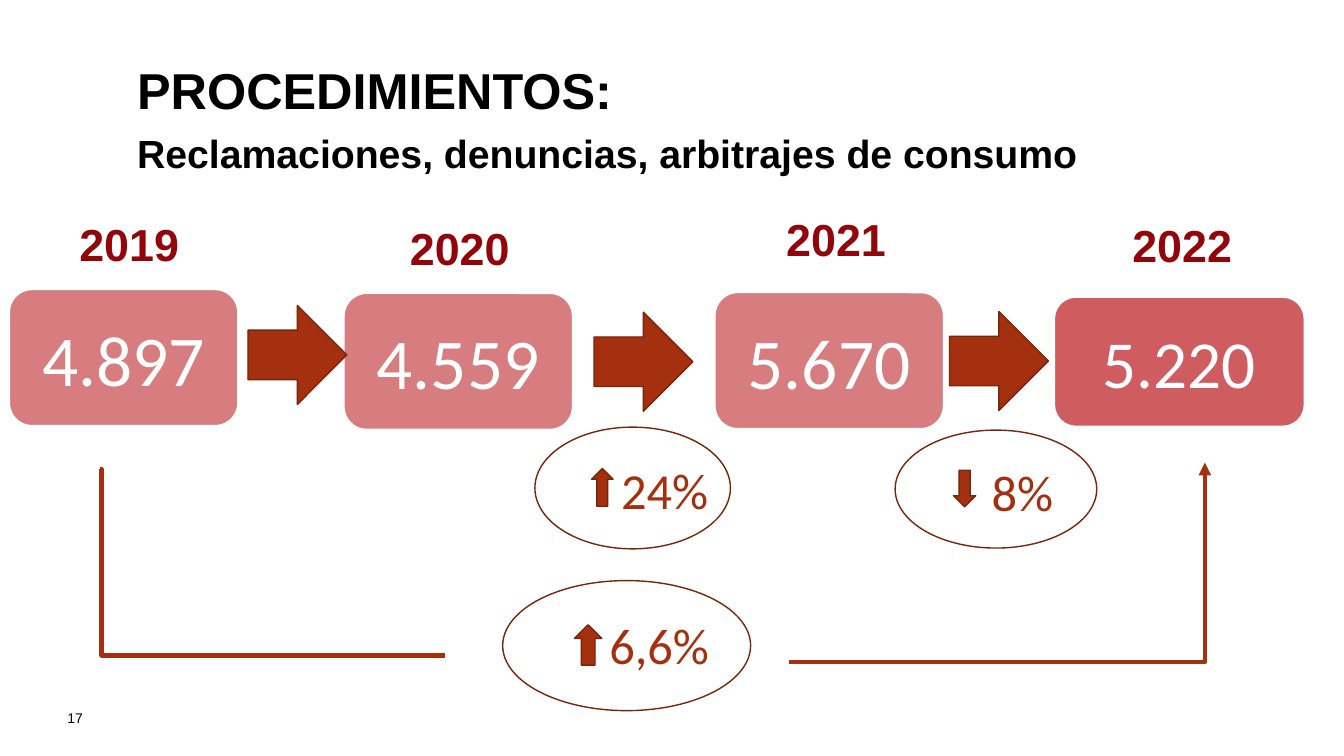
from dataclasses import dataclass

from lxml.etree import SubElement
from pptx import Presentation
from pptx.dml.color import RGBColor
from pptx.enum.shapes import MSO_CONNECTOR, MSO_SHAPE
from pptx.enum.text import MSO_ANCHOR, PP_ALIGN
from pptx.oxml.ns import qn
from pptx.util import Inches, Pt


@dataclass(frozen=True)
class Theme:
    heading_font: str = "Arial"
    figure_font: str = "Calibri"
    black: str = "000000"
    white: str = "FFFFFF"
    year: str = "92060B"
    card: str = "CF5D60"
    rust: str = "A5300F"
    outline: str = "7A240B"
    title_size: float = 36
    subtitle_size: float = 28
    year_size: float = 32
    change_size: float = 36
    number_size: float = 10


@dataclass(frozen=True)
class Box:
    """An area of the slide, in hundredths of its width and height."""
    left: float
    top: float
    width: float
    height: float

    def inner(self, left, top, width, height):
        """A box inside this one, given as shares of its size."""
        return Box(self.left + left * self.width, self.top + top * self.height,
                   width * self.width, height * self.height)


THEME = Theme()
WIDTH, HEIGHT = Inches(13.33), Inches(7.5)
COLUMN, ROW = WIDTH / 100, HEIGHT / 100


def emu(box):
    return (round(box.left * COLUMN), round(box.top * ROW),
            round(box.width * COLUMN), round(box.height * ROW))


def style(paragraph, font, size, color, bold=False):
    paragraph.font.name = font
    paragraph.font.size = Pt(size)
    paragraph.font.bold = bold
    paragraph.font.color.rgb = RGBColor.from_string(color)


def add_text(page, box, text, font, size, color, bold=False, margins=(0, 0.04)):
    """Place a text box with its first paragraph and return its frame."""
    frame = page.shapes.add_textbox(*emu(box)).text_frame
    frame.word_wrap = True
    frame.margin_left = frame.margin_right = Inches(margins[0])
    frame.margin_top = frame.margin_bottom = Inches(margins[1])
    frame.paragraphs[0].text = text
    style(frame.paragraphs[0], font, size, color, bold)
    return frame


def add_block(page, kind, box, fill, line):
    shape = page.shapes.add_shape(kind, *emu(box))
    shape.shadow.inherit = False
    if fill:
        shape.fill.solid()
        shape.fill.fore_color.rgb = RGBColor.from_string(fill)
    else:
        shape.fill.background()
    shape.line.color.rgb = RGBColor.from_string(line)
    shape.line.width = Pt(1)
    return shape


def add_heading(page, box, title, subtitle):
    frame = add_text(page, box, title, THEME.heading_font, THEME.title_size,
                     THEME.black, True, (0.14, 0.05))
    second = frame.add_paragraph()
    second.text = subtitle
    second.space_before = Pt(7)
    style(second, THEME.heading_font, THEME.subtitle_size, THEME.black, True)


def add_page_number(page, box, number):
    frame = add_text(page, box, number, THEME.heading_font, THEME.number_size,
                     THEME.black, margins=(0.1, 0.05))
    frame.vertical_anchor = MSO_ANCHOR.MIDDLE
    frame.paragraphs[0].alignment = PP_ALIGN.RIGHT


def add_year_card(page, box, year, year_shift, total, total_size, opacity):
    """A rounded total with its year, shifted from the card's top left corner."""
    across, up = year_shift
    label = Box(box.left + across, box.top - up, 10.65, 5.2)
    add_text(page, label, year, THEME.heading_font, THEME.year_size, THEME.year, True)
    card = add_block(page, MSO_SHAPE.ROUNDED_RECTANGLE, box, THEME.card, THEME.white)
    if opacity < 100:
        color = card._element.spPr.find(qn("a:solidFill")).find(qn("a:srgbClr"))
        SubElement(color, qn("a:alpha"), val=str(opacity * 1000))
    frame = card.text_frame
    frame.vertical_anchor = MSO_ANCHOR.MIDDLE
    paragraph = frame.paragraphs[0]
    paragraph.text = total
    paragraph.alignment = PP_ALIGN.CENTER
    style(paragraph, THEME.figure_font, total_size, THEME.white)


def add_change(page, box, arrow, change, text_start):
    """An oval with a small arrow and a percentage."""
    add_block(page, arrow, box.inner(0.29, 0.34, 0.11, 0.31), THEME.rust, THEME.outline)
    add_text(page, box.inner(text_start, 0.22, 0.75, 0.55), change, THEME.figure_font,
             THEME.change_size, THEME.rust, margins=(0.1, 0.05))
    add_block(page, MSO_SHAPE.OVAL, box, None, THEME.outline)


def add_bracket(page, start, end, bend, arrowhead=False):
    """An elbow line; bend is the share of its width where it turns."""
    line = page.shapes.add_connector(
        MSO_CONNECTOR.ELBOW, round(start[0] * COLUMN), round(start[1] * ROW),
        round(end[0] * COLUMN), round(end[1] * ROW))
    line.line.color.rgb = RGBColor.from_string(THEME.rust)
    line.line.width = Pt(3)
    properties = line._element.spPr
    guides = properties.find(qn("a:prstGeom")).get_or_add_avLst()
    SubElement(guides, qn("a:gd"), name="adj1", fmla=f"val {round(bend * 100000)}")
    if arrowhead:
        SubElement(properties.find(qn("a:ln")), qn("a:tailEnd"), type="triangle")
    SubElement(properties, qn("a:effectLst"))


def add_procedures(page):
    add_heading(page, Box(9.15, 7.1, 79.7, 18), "PROCEDIMIENTOS:",
                "Reclamaciones, denuncias, arbitrajes de consumo")
    for box, *content in (
        (Box(0.7, 38.3, 17, 18), "2019", (5.2, 10.2), "4.897", 51, 80),
        (Box(25.6, 38.8, 17, 18), "2020", (4.9, 10.2), "4.559", 51, 80),
        (Box(53.2, 38.7, 17, 18), "2021", (5.3, 11.2), "5.670", 51, 80),
        (Box(78.45, 39.3, 18.6, 17.1), "2022", (5.8, 11), "5.220", 48, 100),
    ):
        add_year_card(page, box, *content)
    for left, top in ((18.45, 40.4), (44.2, 41.3), (70.65, 41.2)):
        add_block(page, MSO_SHAPE.RIGHT_ARROW, Box(left, top, 7.35, 13.1),
                  THEME.rust, THEME.outline)
    for box, *content in (
        (Box(39.8, 56.5, 14.55, 16.1), MSO_SHAPE.UP_ARROW, "24%", 0.39),
        (Box(66.6, 56.9, 15, 15.6), MSO_SHAPE.DOWN_ARROW, "8%", 0.43),
        (Box(37.4, 76.8, 18.45, 17.2), MSO_SHAPE.UP_ARROW, "6,6%", 0.39),
    ):
        add_change(page, box, *content)
    add_bracket(page, (7.43, 62), (33.15, 86.7), 0.005)
    add_bracket(page, (58.7, 87.6), (89.65, 61.2), 1, arrowhead=True)
    add_page_number(page, Box(0, 92.4, 6.9, 5.2), "17")


def main():
    deck = Presentation()
    deck.slide_width, deck.slide_height = WIDTH, HEIGHT
    add_procedures(deck.slides.add_slide(deck.slide_layouts[6]))
    deck.save("out.pptx")


if __name__ == "__main__":
    main()
